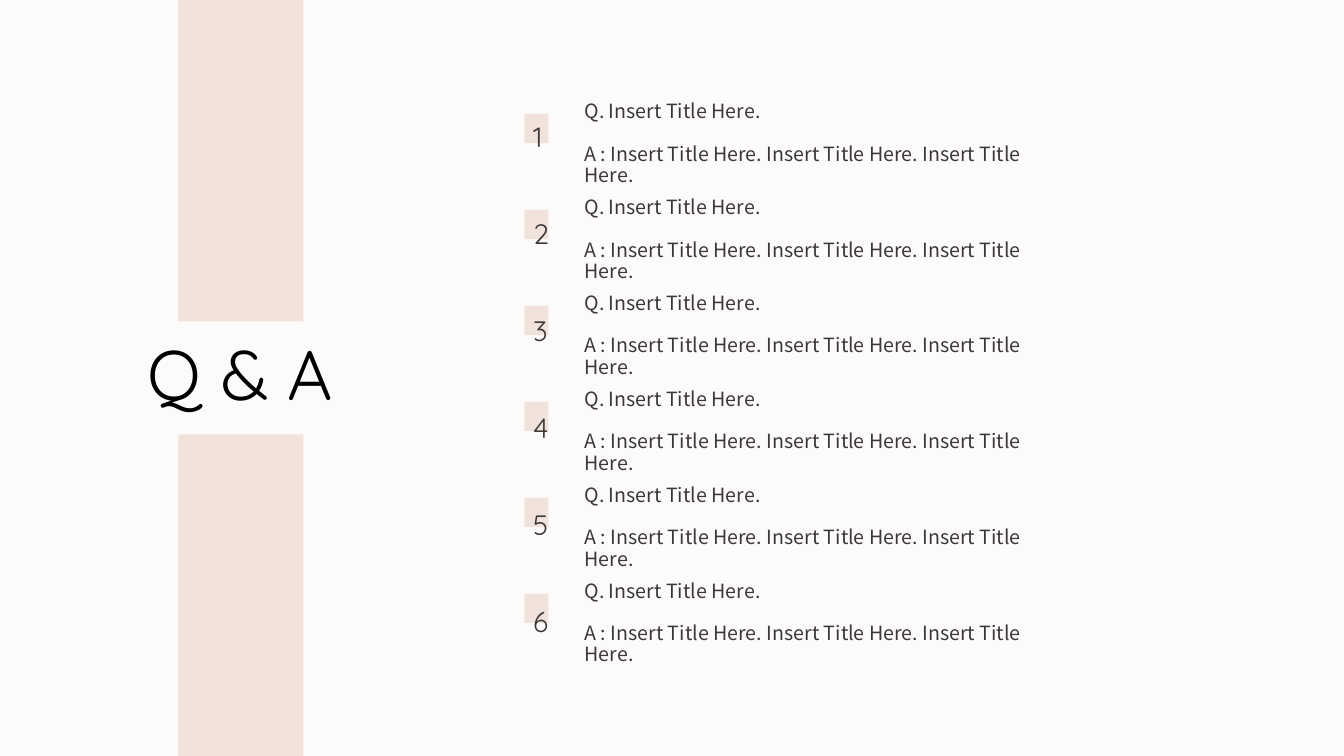
import pptx
import pptx.dml.color
import pptx.enum.shapes
import pptx.enum.text
import pptx.oxml.ns
import pptx.util
from lxml import etree

RGBColor = pptx.dml.color.RGBColor
IVORY = RGBColor(0xFD, 0xFB, 0xF9)
BLUSH = RGBColor(0xEF, 0xDC, 0xD5)
CHARCOAL = RGBColor(0x3B, 0x38, 0x38)
BLACK = RGBColor(0, 0, 0)

HEADING_FONT = "Quicksand"
BODY_FONT = "Noto Sans CJK KR"
WIDTH, HEIGHT = pptx.util.Inches(13.33), pptx.util.Inches(7.5)

BAND_HEIGHT = 42.53
FIRST_ROW = 15.07
ROW_PITCH = 12.69
NUMBER_PITCH = 12.83

QUESTION = "Q. Insert Title Here."
ANSWER = "A : Insert Title Here. Insert Title Here. Insert Title Here."
ENTRIES = [(QUESTION, ANSWER)] * 6


def share(left, top, width, height):
    """Turn percentages of the slide into lengths."""
    return (int(WIDTH * left / 100), int(HEIGHT * top / 100),
            int(WIDTH * width / 100), int(HEIGHT * height / 100))


def add_block(shapes, *box):
    sp = shapes.add_shape(pptx.enum.shapes.MSO_SHAPE.RECTANGLE, *share(*box))
    sp.shadow.inherit = False
    sp.line.fill.background()
    sp.fill.solid()
    sp.fill.fore_color.rgb = BLUSH
    color = sp.fill._xPr.find(".//" + pptx.oxml.ns.qn("a:srgbClr"))
    etree.SubElement(color, pptx.oxml.ns.qn("a:alpha"), val="80000")


def write(tf, lines, font, size, color, anchor):
    tf.word_wrap = True
    tf.vertical_anchor = anchor
    for i, line in enumerate(lines):
        p = tf.add_paragraph() if i else tf.paragraphs[0]
        p.text = line
        p.line_spacing = 0.9
        p.space_before = pptx.util.Pt(15 if i else 0)
        p.font.name = font
        p.font.size = pptx.util.Pt(size)
        p.font.color.rgb = color


def add_text(shapes, lines, font, size, *box):
    tf = shapes.add_textbox(*share(*box)).text_frame
    write(tf, lines, font, size, CHARCOAL, pptx.enum.text.MSO_ANCHOR.BOTTOM)


def add_title(s, text):
    title = s.shapes.title
    title.left, title.top, title.width, title.height = share(7.35, 44, 21.08, 12)
    tf = title.text_frame
    write(tf, [text], HEADING_FONT, 50, BLACK, pptx.enum.text.MSO_ANCHOR.MIDDLE)
    tf.paragraphs[0].alignment = pptx.enum.text.PP_ALIGN.CENTER


def add_bands(s):
    shapes = s.shapes.add_group_shape().shapes
    for top in (0, 100 - BAND_HEIGHT):
        add_block(shapes, 13.28, top, 9.3, BAND_HEIGHT)


def add_entry(s, row, lines):
    top = FIRST_ROW + row * ROW_PITCH
    number_top = FIRST_ROW + row * NUMBER_PITCH
    add_text(s.shapes, lines, BODY_FONT, 14, 42.76, top, 35.63, 10.27)
    badge = s.shapes.add_group_shape().shapes
    add_block(badge, 39.01, top, 1.8, 3.87)
    add_text(badge, [str(row + 1)], HEADING_FONT, 20, 38.93, number_top, 2.25, 5.87)


def main():
    prs = pptx.Presentation()
    prs.slide_width, prs.slide_height = WIDTH, HEIGHT
    s = prs.slides.add_slide(prs.slide_layouts[5])
    s.background.fill.solid()
    s.background.fill.fore_color.rgb = IVORY
    add_title(s, "Q & A")
    add_bands(s)
    for row, lines in enumerate(ENTRIES):
        add_entry(s, row, lines)
    prs.save("out.pptx")


if __name__ == "__main__":
    main()
